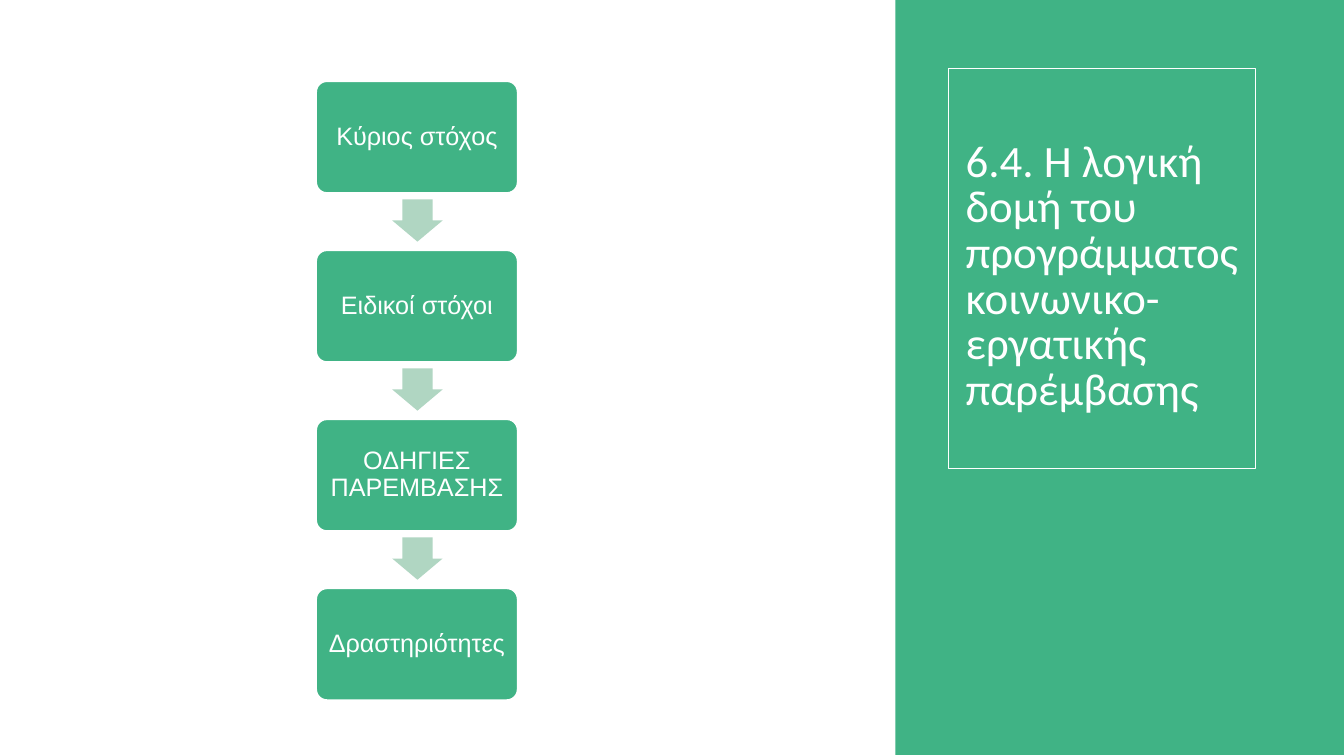
"""Build a slide with a four-step flow and a green title panel."""
from dataclasses import dataclass

from pptx import Presentation
from pptx.dml.color import RGBColor
from pptx.enum.shapes import MSO_SHAPE
from pptx.enum.text import MSO_ANCHOR, PP_ALIGN
from pptx.util import Inches, Pt


@dataclass(frozen=True)
class Theme:
    green: RGBColor = RGBColor(0x40, 0xB3, 0x85)
    pale: RGBColor = RGBColor(0xB0, 0xD6, 0xC2)
    white: RGBColor = RGBColor(0xFF, 0xFF, 0xFF)
    head: Pt = Pt(32)
    body: Pt = Pt(18)


theme = Theme()
deck = Presentation()
deck.slide_width, deck.slide_height = Inches(13.33), Inches(7.5)
slide = deck.slides.add_slide(deck.slide_layouts[6])


def add_shape(kind, place, fill=None, line=None, width=1, bends=()):
    shape = slide.shapes.add_shape(kind, *map(Inches, place))
    shape.shadow.inherit = False
    for part, color in ((shape.fill, fill), (shape.line.fill, line)):
        if color is None:
            part.background()
        else:
            part.solid()
            part.fore_color.rgb = color
    if line is not None:
        shape.line.width = Pt(width)
    for spot, bend in enumerate(bends):
        shape.adjustments[spot] = bend
    return shape


def set_text(shape, text, size, font, pads, align, lead):
    frame = shape.text_frame
    frame.text = text
    par = frame.paragraphs[0]
    side, edge = map(Inches, pads)
    formats = {
        frame: {"word_wrap": True, "vertical_anchor": MSO_ANCHOR.MIDDLE,
                "margin_left": side, "margin_right": side,
                "margin_top": edge, "margin_bottom": edge},
        par: {"alignment": align, "line_spacing": lead},
        par.runs[0].font: {"size": size, "name": font},
    }
    for item, values in formats.items():
        for name, value in values.items():
            setattr(item, name, value)
    par.runs[0].font.color.rgb = theme.white


add_shape(MSO_SHAPE.RECTANGLE, (8.88, 0, 4.45, 7.49), theme.green)
add_shape(MSO_SHAPE.RECTANGLE, (9.41, 0.68, 3.04, 3.97), line=theme.white, width=0.75)
title = slide.shapes.add_textbox(*map(Inches, (9.48, 0.86, 2.97, 3.79)))
set_text(title, "6.4. Η λογική δομή του προγράμματος κοινωνικο-εργατικής παρέμβασης",
         theme.head, "Calibri", (0.1, 0.05), PP_ALIGN.LEFT, 0.85)

steps = ["Κύριος στόχος", "Ειδικοί στόχοι", "ΟΔΗΓΙΕΣ ΠΑΡΕΜΒΑΣΗΣ", "Δραστηριότητες"]
left, first, pitch = 3.13, 0.8, 1.677
for row, label in enumerate(steps):
    top = first + row * pitch
    if row:
        arrow = add_shape(MSO_SHAPE.RIGHT_ARROW, (left + 0.8, top - 0.54, 0.42, 0.5),
                          theme.pale, bends=(0.6, 0.5))
        arrow.rotation = 90
    box = add_shape(MSO_SHAPE.ROUNDED_RECTANGLE, (left, top, 2.01, 1.12),
                    theme.green, theme.white, 2, (0.1,))
    set_text(box, label, theme.body, "Arial", (0.07, 0.07), PP_ALIGN.CENTER, 0.9)

deck.save("out.pptx")
